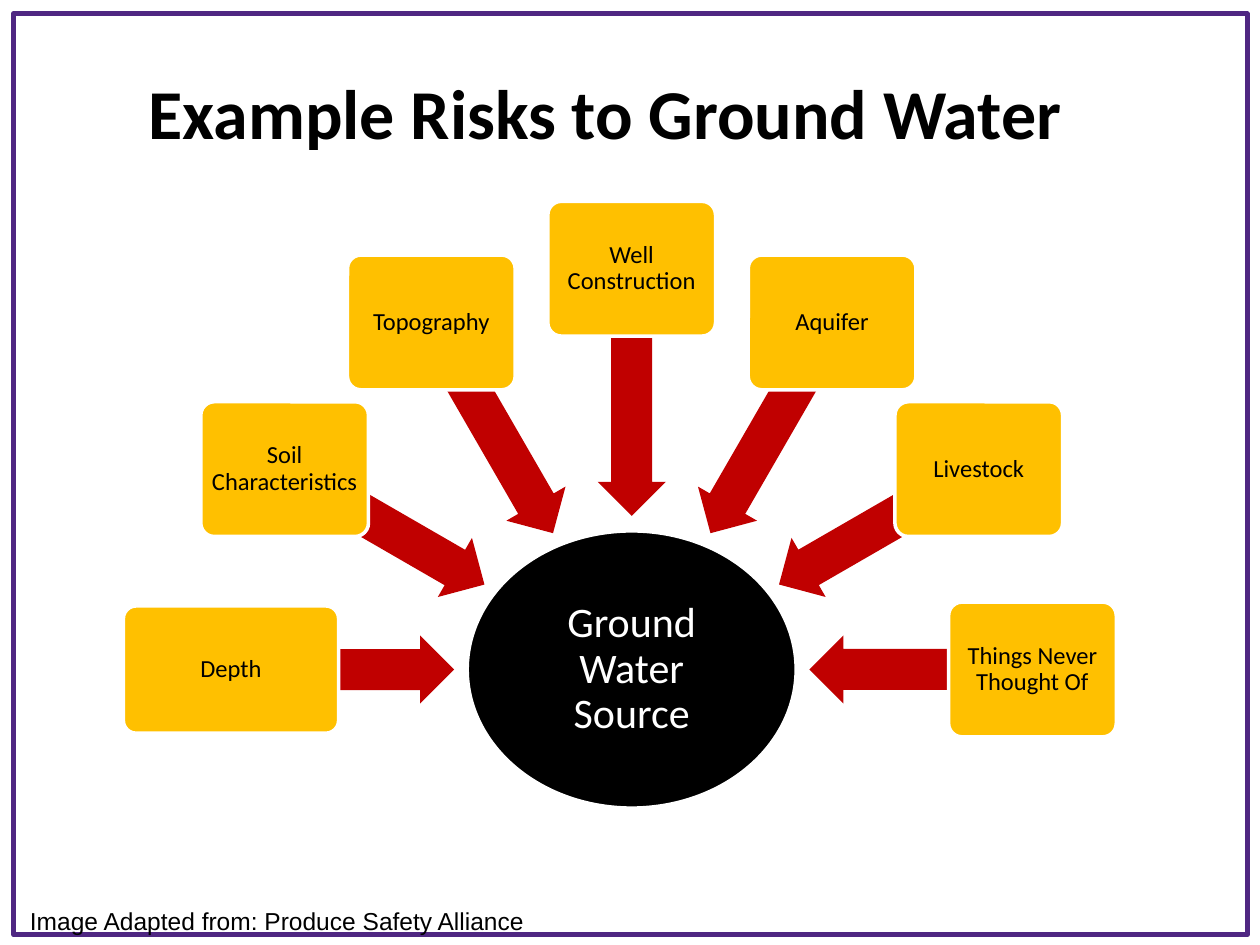
import math
from dataclasses import dataclass

from pptx import Presentation
from pptx import util as u
from pptx.dml.color import RGBColor
from pptx.enum import shapes, text
from pptx.slide import Slide

BLACK = RGBColor(0x00, 0x00, 0x00)
WHITE = RGBColor(0xFF, 0xFF, 0xFF)
PURPLE = RGBColor(0x4F, 0x27, 0x82)
GOLD = RGBColor(0xFF, 0xC0, 0x00)
RED = RGBColor(0xC0, 0x00, 0x00)

HUB_X, HUB_Y = 361, 382.6
RADIUS = 229
BOX_SIZE = (95.8, 77)
TIP_RADIUS = {0: 101.5, 30: 97.2, 60: 90, 90: 87.8}
RISKS = [
    ("Depth", 180, (123, 72.7)),
    ("Soil Characteristics", 150, BOX_SIZE),
    ("Topography", 120, BOX_SIZE),
    ("Well Construction", 90, BOX_SIZE),
    ("Aquifer", 60, BOX_SIZE),
    ("Livestock", 30, BOX_SIZE),
    ("Things Never Thought Of", 0, BOX_SIZE),
]


@dataclass
class RiskDiagram:
    """Draws a hub with risks pointing at it on one slide."""

    page: Slide
    font: str = "Calibri"

    def shape(self, kind, center, size, fill=None, line=None, width=2):
        left, top = (c - s / 2 for c, s in zip(center, size))
        shape = self.page.shapes.add_shape(kind, u.Pt(left), u.Pt(top), u.Pt(size[0]), u.Pt(size[1]))
        shape.shadow.inherit = False
        if fill is None:
            shape.fill.background()
        else:
            shape.fill.solid()
            shape.fill.fore_color.rgb = fill
        if line is None:
            shape.line.fill.background()
        else:
            shape.line.color.rgb = line
            shape.line.width = u.Pt(width)
        return shape

    def set_words(self, box, words, size, color, font=None, bold=False):
        para = box.text_frame.paragraphs[0]
        para.text = words
        para.font.name = font or self.font
        para.font.size = u.Pt(size)
        para.font.bold = bold
        para.font.color.rgb = color
        return para

    def label(self, shape, words, size, color, inset):
        frame = shape.text_frame
        frame.word_wrap = True
        frame.vertical_anchor = text.MSO_ANCHOR.MIDDLE
        frame.margin_left = frame.margin_right = u.Pt(inset)
        frame.margin_top = frame.margin_bottom = u.Pt(inset)
        para = self.set_words(shape, words, size, color)
        para.alignment = text.PP_ALIGN.CENTER
        para.line_spacing = 0.9

    def text_box(self, words, left, top, width, height, size, font=None, bold=False):
        box = self.page.shapes.add_textbox(u.Pt(left), u.Pt(top), u.Pt(width), u.Pt(height))
        box.text_frame.word_wrap = True
        box.text_frame.auto_size = text.MSO_AUTO_SIZE.SHAPE_TO_FIT_TEXT
        self.set_words(box, words, size, BLACK, font, bold)

    def hub(self, words):
        oval = self.shape(shapes.MSO_SHAPE.OVAL, (HUB_X, HUB_Y), (188, 158.4), BLACK, WHITE)
        self.label(oval, words, 24, WHITE, 1.2)

    def arrow(self, angle):
        tip = TIP_RADIUS[min(angle, 180 - angle)]
        center = self.around_hub(angle, (RADIUS + tip) / 2)
        arrow = self.shape(shapes.MSO_SHAPE.LEFT_ARROW, center, (RADIUS - tip, 39), RED)
        arrow.adjustments[0] = 0.6
        arrow.adjustments[1] = 0.5
        arrow.rotation = -angle % 360

    def risk(self, words, angle, size):
        self.arrow(angle)
        center = self.around_hub(angle, RADIUS)
        box = self.shape(shapes.MSO_SHAPE.ROUNDED_RECTANGLE, center, size, GOLD, WHITE)
        box.adjustments[0] = 0.1
        self.label(box, words, 14, BLACK, 2.1)

    @staticmethod
    def around_hub(angle, radius):
        turn = math.radians(angle)
        return HUB_X + radius * math.cos(turn), HUB_Y - radius * math.sin(turn)


def main():
    deck = Presentation()
    deck.slide_width, deck.slide_height = u.Pt(720), u.Pt(540)
    diagram = RiskDiagram(deck.slides.add_slide(deck.slide_layouts[6]))
    diagram.shape(shapes.MSO_SHAPE.RECTANGLE, (360.3, 271), (704.8, 526.2), line=PURPLE, width=3)
    diagram.hub("Ground Water Source")
    for words, angle, size in RISKS:
        diagram.risk(words, angle, size)
    diagram.text_box("Example Risks to Ground Water", 77.8, 36, 567.4, 55.4, 40, bold=True)
    diagram.text_box("Image Adapted from: Produce Safety Alliance", 10, 514, 323.3, 24.5, 14, "Arial")
    deck.save("out.pptx")


if __name__ == "__main__":
    main()
